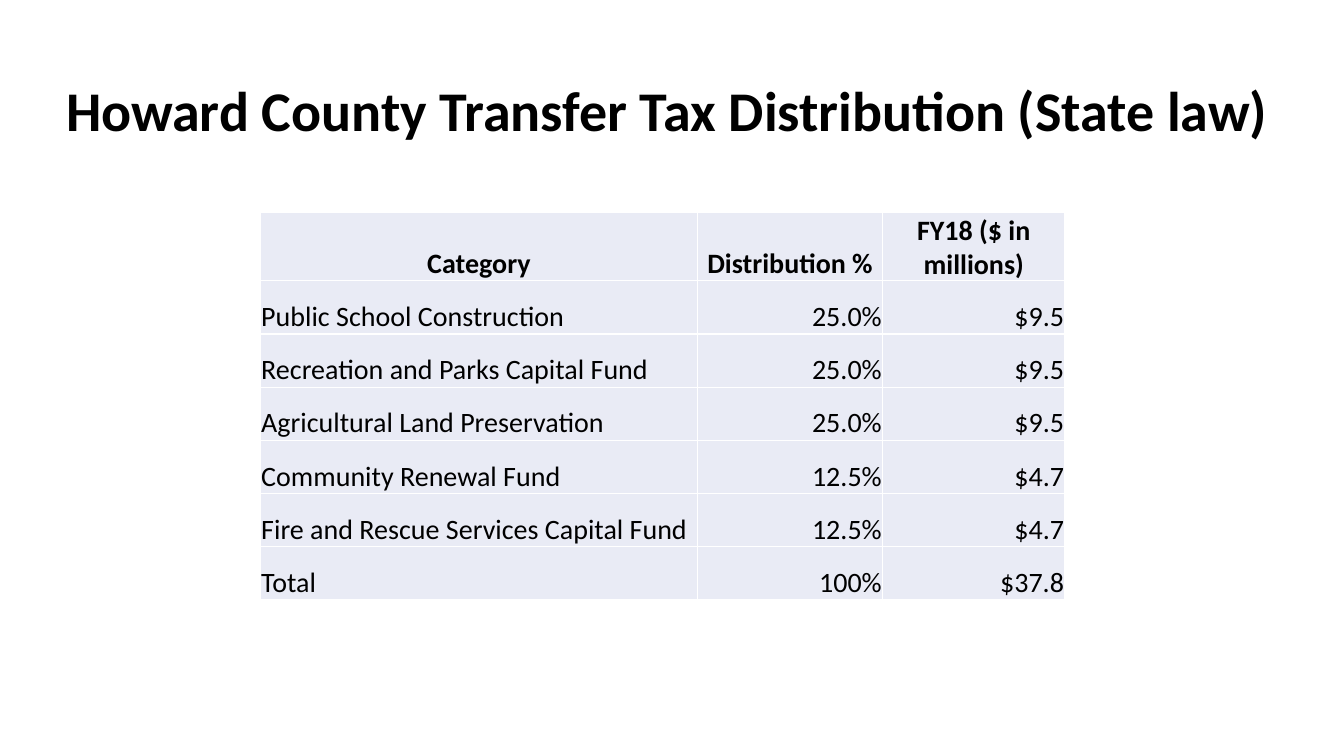
import pptx
import pptx.dml.color
import pptx.enum.text
import pptx.oxml
import pptx.oxml.ns
import pptx.util

Pt = pptx.util.Pt
ALIGN = pptx.enum.text.PP_ALIGN
ANCHOR = pptx.enum.text.MSO_ANCHOR
BLACK = pptx.dml.color.RGBColor(0x00, 0x00, 0x00)
WHITE = pptx.dml.color.RGBColor(0xFF, 0xFF, 0xFF)
PALE_BLUE = pptx.dml.color.RGBColor(0xE9, 0xEB, 0xF5)


def write_text(frame, text, size=20, bold=False, align=ALIGN.LEFT, spacing=1.0):
    paragraph = frame.paragraphs[0]
    paragraph.alignment = align
    paragraph.line_spacing = spacing
    run = paragraph.add_run()
    run.text = text
    run.font.name = "Calibri"
    run.font.size = Pt(size)
    run.font.bold = bold
    run.font.color.rgb = BLACK


def add_borders(cell, color, width):
    properties = cell._tc.get_or_add_tcPr()
    for side in ("lnL", "lnR", "lnT", "lnB"):
        properties.append(pptx.oxml.parse_xml(
            f'<a:{side} {pptx.oxml.ns.nsdecls("a")} w="{Pt(width)}">'
            f'<a:solidFill><a:srgbClr val="{color}"/></a:solidFill></a:{side}>'))


presentation = pptx.Presentation()
presentation.slide_width = Pt(960)
presentation.slide_height = Pt(540)
slide = presentation.slides.add_slide(presentation.slide_layouts[6])

# Title
title = slide.shapes.add_textbox(Pt(33.84), Pt(28.8), Pt(884.88), Pt(104.4))
title.text_frame.word_wrap = True
title.text_frame.vertical_anchor = ANCHOR.MIDDLE
write_text(title.text_frame, "Howard County Transfer Tax Distribution (State law)",
           size=40, bold=True, align=ALIGN.CENTER, spacing=0.9)

# Distribution table
ROWS = [
    ("Category", "Distribution %", "FY18 ($ in millions)"),
    ("Public School Construction", "25.0%", "$9.5"),
    ("Recreation and Parks Capital Fund", "25.0%", "$9.5"),
    ("Agricultural Land Preservation", "25.0%", "$9.5"),
    ("Community Renewal Fund", "12.5%", "$4.7"),
    ("Fire and Rescue Services Capital Fund", "12.5%", "$4.7"),
    ("Total", "100%", "$37.8"),
]
COLUMN_WIDTHS = (312.2, 132.3, 130.2)
ROW_HEIGHT = 38

table = slide.shapes.add_table(
    len(ROWS), len(COLUMN_WIDTHS), Pt(186), Pt(152),
    Pt(sum(COLUMN_WIDTHS)), Pt(ROW_HEIGHT * len(ROWS))).table
for column, width in zip(table.columns, COLUMN_WIDTHS):
    column.width = Pt(width)

for row_index, values in enumerate(ROWS):
    is_header = row_index == 0
    for column_index, value in enumerate(values):
        cell = table.cell(row_index, column_index)
        cell.margin_left = cell.margin_right = cell.margin_top = Pt(0.6)
        cell.margin_bottom = Pt(0)
        cell.vertical_anchor = ANCHOR.BOTTOM
        add_borders(cell, WHITE, 1)
        cell.fill.solid()
        cell.fill.fore_color.rgb = PALE_BLUE
        if is_header:
            align = ALIGN.CENTER
        else:
            align = ALIGN.LEFT if column_index == 0 else ALIGN.RIGHT
        write_text(cell.text_frame, value, bold=is_header, align=align)

presentation.save("out.pptx")
